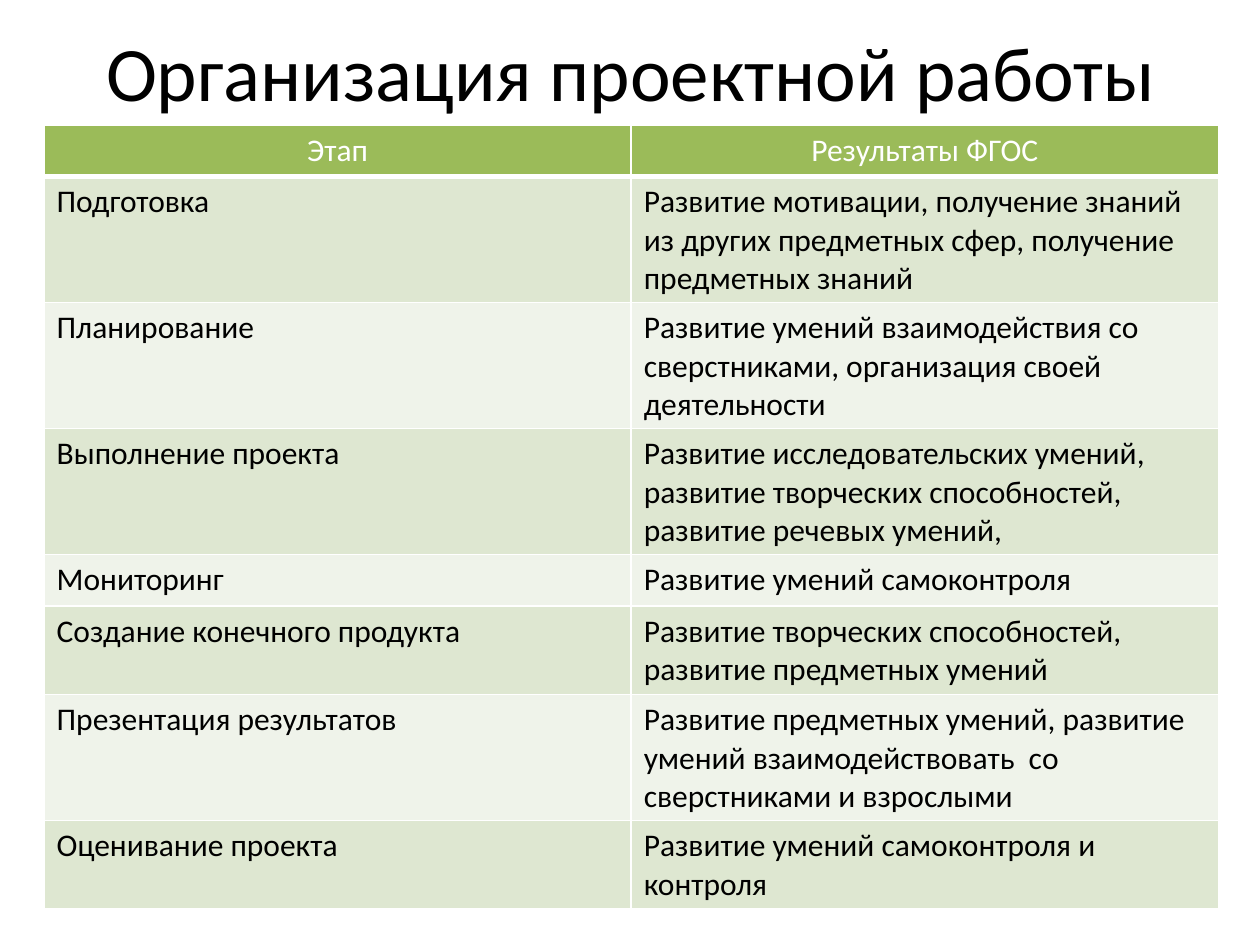
from typing import NamedTuple

from lxml import etree
from pptx import Presentation
from pptx.dml.color import RGBColor
from pptx.enum.text import MSO_ANCHOR, PP_ALIGN
from pptx.oxml.ns import qn
from pptx.util import Inches, Pt

CENTER, LEFT = PP_ALIGN.CENTER, PP_ALIGN.LEFT
MIDDLE = MSO_ANCHOR.MIDDLE
FONT = "Calibri"
WIDTH, HEIGHT = Inches(10), Inches(7.5)
COLORS = {
    "text": "000000",
    "white": "FFFFFF",
    "head": "9BBB59",
    "dark": "DEE7D1",
    "light": "EFF3EA",
}
# Row height by number of text lines
ROW_HEIGHT = {1: Inches(0.41), 2: Inches(0.7), 3: Inches(1)}


class Stage(NamedTuple):
    name: str
    result: str
    lines: int


HEAD = Stage("Этап", "Результаты ФГОС", 1)
STAGES = [
    Stage("Подготовка", "Развитие мотивации, получение знаний из других "
          "предметных сфер, получение предметных знаний", 3),
    Stage("Планирование", "Развитие умений взаимодействия со сверстниками, "
          "организация своей деятельности", 3),
    Stage("Выполнение проекта", "Развитие исследовательских умений, развитие "
          "творческих способностей, развитие речевых умений,", 3),
    Stage("Мониторинг", "Развитие умений самоконтроля", 1),
    Stage("Создание конечного продукта", "Развитие творческих способностей, "
          "развитие предметных умений", 2),
    Stage("Презентация результатов", "Развитие предметных умений, развитие "
          "умений взаимодействовать  со сверстниками и взрослыми", 3),
    Stage("Оценивание проекта", "Развитие умений самоконтроля и контроля", 2),
]


def write(frame, text: str, size: int, color: str, align) -> None:
    para = frame.paragraphs[0]
    para.text = text
    para.alignment = align
    font = para.font
    font.name, font.size, font.bold = FONT, Pt(size), False
    font.color.rgb = RGBColor.from_string(COLORS[color])


def add_border(cell, side: str, width: float) -> None:
    props = cell._tc.get_or_add_tcPr()
    line = etree.SubElement(props, qn(f"a:ln{side}"), w=str(Pt(width)))
    fill = etree.SubElement(line, qn("a:solidFill"))
    etree.SubElement(fill, qn("a:srgbClr"), val=COLORS["white"])


def add_title(slide, text: str) -> None:
    box = slide.shapes.add_textbox(
        Inches(0.51), Inches(0.13), WIDTH * 0.9, Inches(0.87))
    frame = box.text_frame
    frame.word_wrap = True
    frame.vertical_anchor = MIDDLE
    write(frame, text, 44, "text", CENTER)


def add_stages(slide, rows: list[Stage]) -> None:
    heights = [ROW_HEIGHT[row.lines] for row in rows]
    table = slide.shapes.add_table(
        len(rows), 2, Inches(0.35), Inches(0.99),
        Inches(9.32), sum(heights)).table
    for index, row in enumerate(rows):
        table.rows[index].height = heights[index]
        is_head = index == 0
        band = "head" if is_head else "dark" if index % 2 else "light"
        for col, text in enumerate((row.name, row.result)):
            cell = table.cell(index, col)
            for side in "LRTB":
                add_border(cell, side, 3 if is_head and side == "B" else 1)
            cell.fill.solid()
            cell.fill.fore_color.rgb = RGBColor.from_string(COLORS[band])
            write(cell.text_frame, text, 18, "white" if is_head else "text",
                  CENTER if is_head else LEFT)


def main() -> None:
    deck = Presentation()
    deck.slide_width, deck.slide_height = WIDTH, HEIGHT
    slide = deck.slides.add_slide(deck.slide_layouts[6])
    # Heading
    add_title(slide, "Организация проектной работы")
    # Stages and their results
    add_stages(slide, [HEAD, *STAGES])
    deck.save("out.pptx")


if __name__ == "__main__":
    main()
